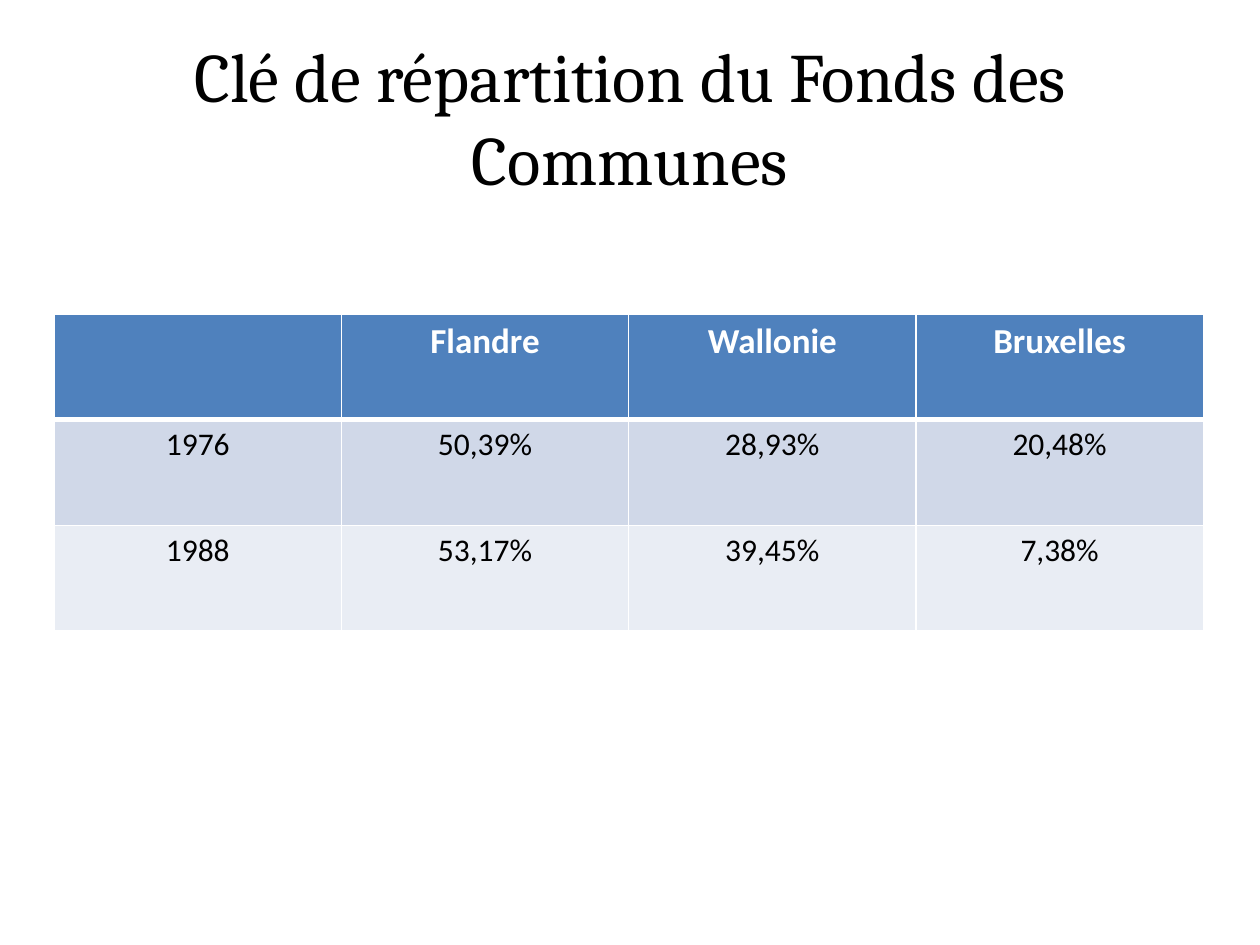
from lxml.etree import SubElement
from pptx import Presentation
from pptx.dml.color import RGBColor
from pptx.enum.text import MSO_ANCHOR, PP_ALIGN
from pptx.oxml.ns import qn
from pptx.util import Inches, Pt

TITLE = "Clé de répartition du Fonds des Communes"
SHARES = [
    ("", "Flandre", "Wallonie", "Bruxelles"),
    ("1976", "50,39%", "28,93%", "20,48%"),
    ("1988", "53,17%", "39,45%", "7,38%"),
]
COLORS = {"header": "4F81BD", "odd": "D0D8E8", "even": "E9EDF4",
          "white": "FFFFFF", "black": "000000"}
TITLE_FONT = {"name": "Cambria", "size": Pt(39.6), "bold": False}
HEADER_FONT = {"name": "Calibri", "size": Pt(20), "bold": True}
BODY_FONT = {"name": "Calibri", "size": Pt(18), "bold": False}
ROW_STYLES = [("header", HEADER_FONT, "white"),
              ("odd", BODY_FONT, "black"),
              ("even", BODY_FONT, "black")]
COLUMN_WIDTH, ROW_HEIGHT = 2.28, 0.84


def rgb(name):
    return RGBColor.from_string(COLORS[name])


def write(frame, text, font, color):
    paragraph = frame.paragraphs[0]
    paragraph.alignment = PP_ALIGN.CENTER
    if not text:
        return
    run = paragraph.add_run()
    run.text = text
    for attribute, value in font.items():
        setattr(run.font, attribute, value)
    run.font.color.rgb = rgb(color)


def add_borders(cell, widths):
    """Draw white lines; widths maps a side (L, R, T, B) to points."""
    properties = cell._tc.get_or_add_tcPr()
    for position, (side, width) in enumerate(widths.items()):
        line = properties.makeelement(qn(f"a:ln{side}"), {"w": str(Pt(width))})
        fill = SubElement(line, qn("a:solidFill"))
        SubElement(fill, qn("a:srgbClr"), val=COLORS["white"])
        properties.insert(position, line)


prs = Presentation()
prs.slide_width, prs.slide_height = Inches(10), Inches(7.5)
slide = prs.slides.add_slide(prs.slide_layouts[5])

title = slide.shapes.title
title.left, title.top = Inches(0.5), Inches(0.3)
title.width, title.height = Inches(9), Inches(1.25)
title.text_frame.vertical_anchor = MSO_ANCHOR.MIDDLE
write(title.text_frame, TITLE, TITLE_FONT, "black")

rows, columns = len(SHARES), len(SHARES[0])
table = slide.shapes.add_table(
    rows, columns, Inches(0.43), Inches(2.49),
    Inches(COLUMN_WIDTH * columns), Inches(ROW_HEIGHT * rows)).table

for r, (values, (fill, font, color)) in enumerate(zip(SHARES, ROW_STYLES)):
    widths = {"L": 1, "R": 1, "T": 3 if r == 1 else 1, "B": 3 if r == 0 else 1}
    for c, value in enumerate(values):
        cell = table.cell(r, c)
        cell.fill.solid()
        cell.fill.fore_color.rgb = rgb(fill)
        write(cell.text_frame, value, font, color)
        add_borders(cell, widths)

prs.save("out.pptx")
